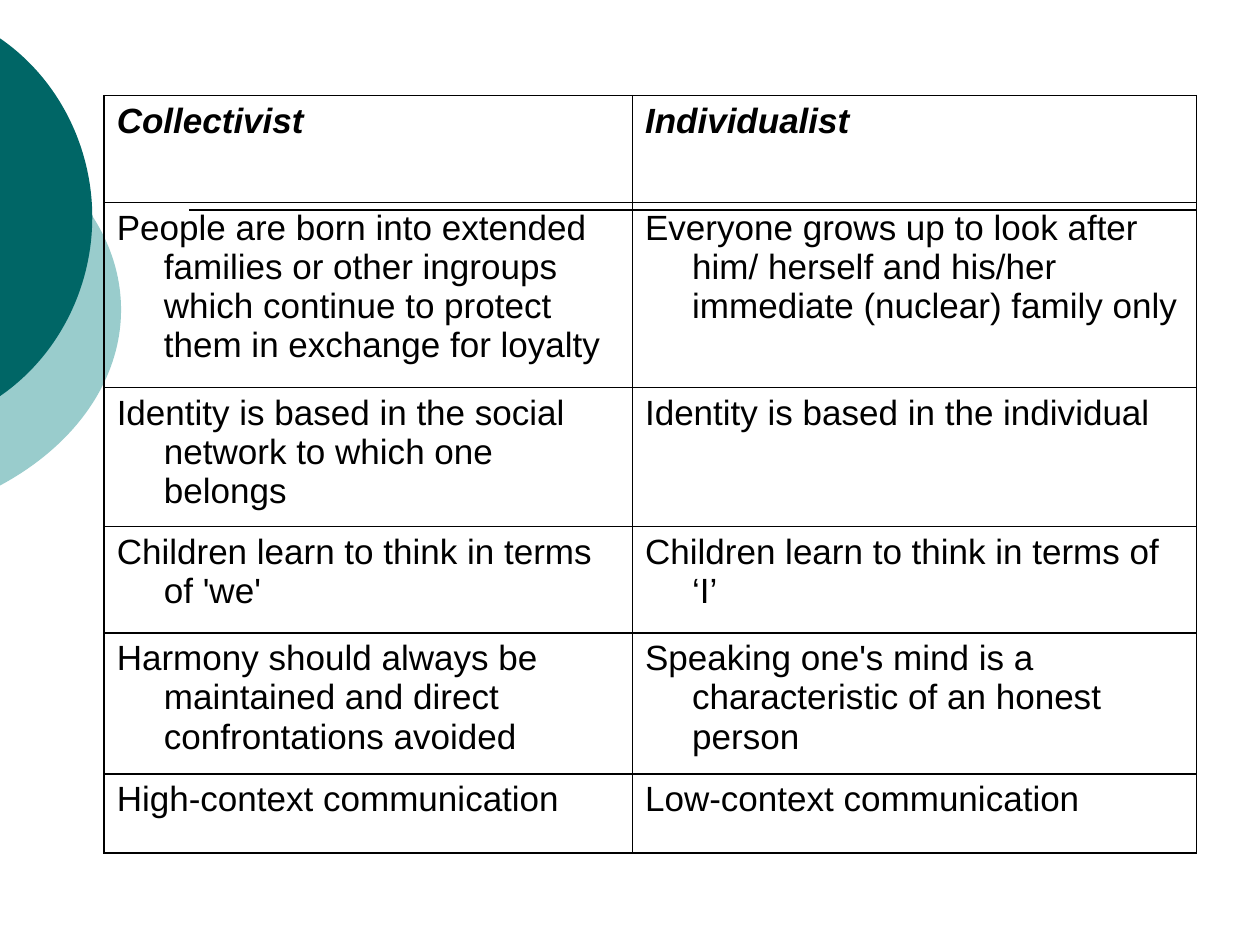
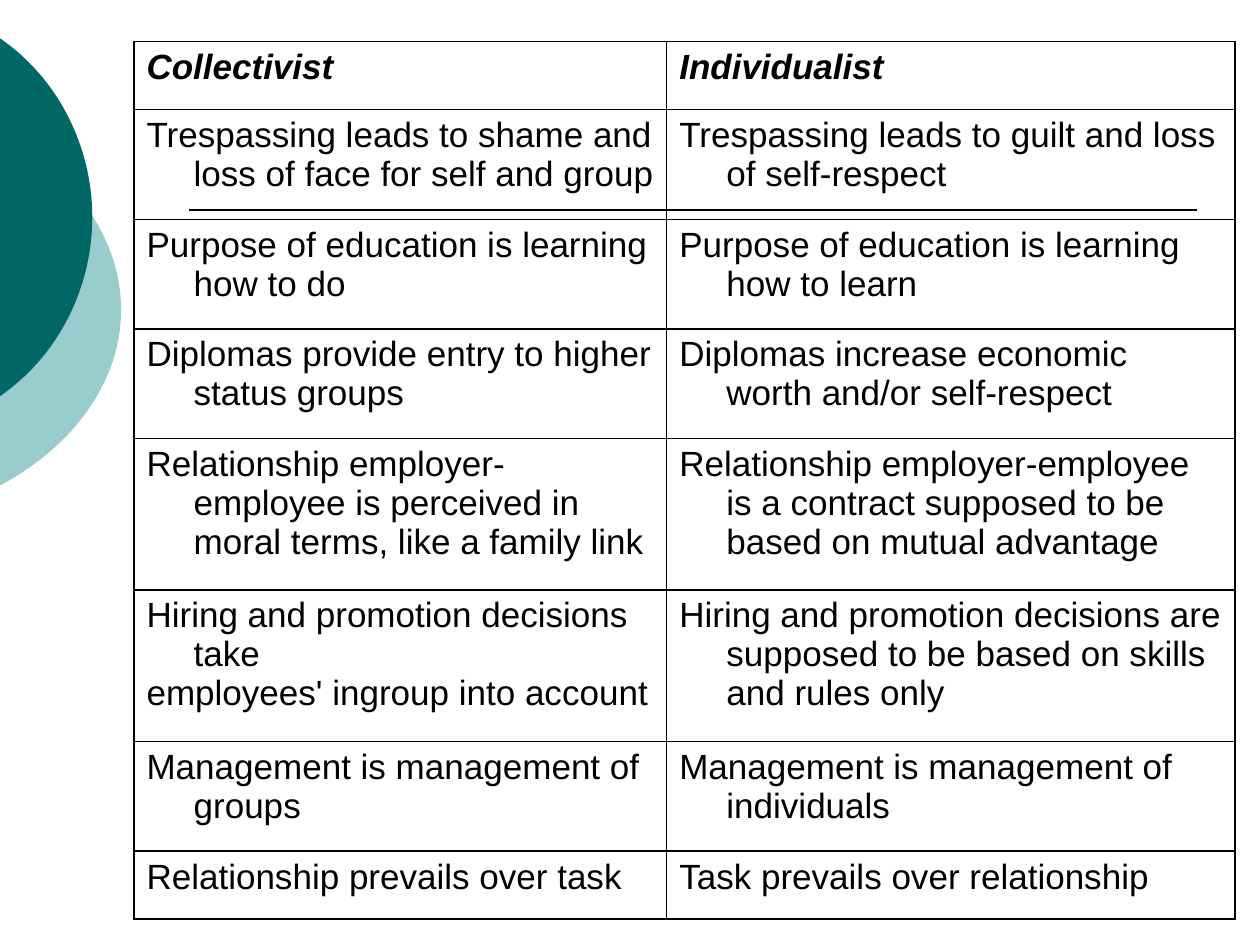
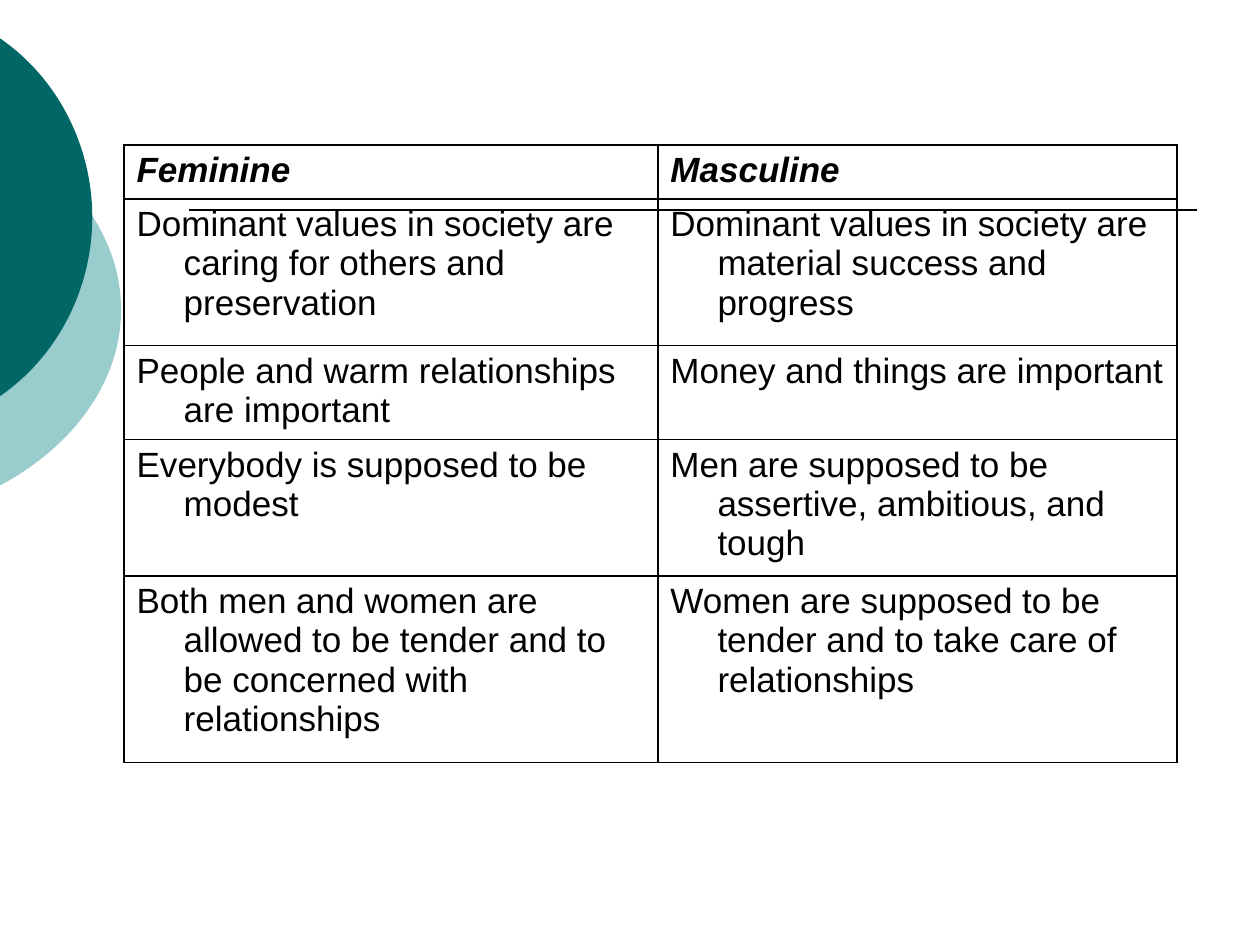
from dataclasses import dataclass

from lxml.etree import SubElement
from pptx import Presentation
from pptx.dml.color import RGBColor
from pptx.enum.shapes import MSO_CONNECTOR
from pptx.oxml import parse_xml
from pptx.oxml.ns import nsdecls, qn
from pptx.slide import Slide
from pptx.table import _Cell
from pptx.util import Cm, Pt


@dataclass(frozen=True)
class Theme:
    ink: str = "000000"
    dark: str = "006666"
    light: str = "99CCCC"
    font: str = "Arial"
    size: int = 20
    line: int = 1
    indent: float = 0.95


@dataclass(frozen=True)
class Disc:
    """An ellipse cut off by the left slide edge, in cm.

    The arc starts at height edge and bends by two control points.
    """
    left: float
    top: float
    wide: float
    high: float
    edge: float
    bends: tuple[tuple[float, float], tuple[float, float]]
    fill: str


@dataclass(frozen=True)
class Grid:
    """A table with its place, column widths and row heights in cm."""
    left: float
    top: float
    cols: tuple[float, ...]
    rows: tuple[float, ...]
    texts: tuple[tuple[str, str], ...]


THEME = Theme()
CUT = -0.02

DISCS = (
    Disc(-8.99, 1.9, 11.43, 8.69, 2.69, ((1.52, 3.51), (2.44, 4.83)),
         THEME.light),
    Disc(-6.73, 0, 8.59, 8.76, 0.76, ((1.17, 1.57), (1.86, 2.95)),
         THEME.dark),
)

GRIDS = (
    Grid(2.1, 1.93, (10.65, 11.37), (2.15, 3.73, 2.8, 2.15, 2.84, 1.6), (
        ("Collectivist", "Individualist"),
        ("People are born into extended families or other ingroups which "
         "continue to protect them in exchange for loyalty",
         "Everyone grows up to look after him/ herself and his/her "
         "immediate (nuclear) family only"),
        ("Identity is based in the social network to which one belongs",
         "Identity is based in the individual"),
        ("Children learn to think in terms of 'we'",
         "Children learn to think in terms of ‘I’"),
        ("Harmony should always be maintained and direct confrontations "
         "avoided",
         "Speaking one's mind is a characteristic of an honest person"),
        ("High-context communication", "Low-context communication"),
    )),
    Grid(2.7, 0.84, (10.74, 11.46),
         (1.37, 2.21, 2.21, 2.21, 3.05, 3.06, 2.21, 1.37), (
        ("Collectivist", "Individualist"),
        ("Trespassing leads to shame and loss of face for self and group",
         "Trespassing leads to guilt and loss of self-respect"),
        ("Purpose of education is learning how to do",
         "Purpose of education is learning how to learn"),
        ("Diplomas provide entry to higher status groups",
         "Diplomas increase economic worth and/or self-respect"),
        ("Relationship employer-employee is perceived in moral terms, like "
         "a family link",
         "Relationship employer-employee is a contract supposed to be based "
         "on mutual advantage"),
        ("Hiring and promotion decisions take\n"
         "employees' ingroup into account",
         "Hiring and promotion decisions are supposed to be based on skills "
         "and rules only"),
        ("Management is management of groups",
         "Management is management of individuals"),
        ("Relationship prevails over task",
         "Task prevails over relationship"),
    )),
    Grid(2.5, 2.92, (10.76, 10.47), (1.09, 2.95, 1.9, 2.75, 3.76), (
        ("Feminine", "Masculine"),
        ("Dominant values in society are caring for others and preservation",
         "Dominant values in society are material success and progress"),
        ("People and warm relationships are important",
         "Money and things are important"),
        ("Everybody is supposed to be modest",
         "Men are supposed to be assertive, ambitious, and tough"),
        ("Both men and women are allowed to be tender and to be concerned "
         "with relationships",
         "Women are supposed to be tender and to take care of "
         "relationships"),
    )),
)


def trace_arc(disc: Disc) -> str:
    """Give the path of the disc: two mirrored curves and a straight cut."""
    mid = disc.top + disc.high / 2
    upper = [(CUT, disc.edge), *disc.bends]
    lower = [(x, 2 * mid - y) for x, y in reversed(upper)]
    spots = [*upper, (disc.left + disc.wide, mid), *lower]
    first, *rest = [
        f'<a:pt x="{Cm(x - disc.left)}" y="{Cm(y - disc.top)}"/>'
        for x, y in spots]
    curves = "".join(
        f'<a:cubicBezTo>{"".join(rest[at:at + 3])}</a:cubicBezTo>'
        for at in (0, 3))
    return (f'<a:path {nsdecls("a")} w="{Cm(disc.wide)}" '
            f'h="{Cm(disc.high)}"><a:moveTo>{first}</a:moveTo>'
            f'{curves}<a:close/></a:path>')


def draw_disc(slide: Slide, disc: Disc) -> None:
    left, top = Cm(disc.left), Cm(disc.top)
    wide, high = Cm(disc.wide), Cm(disc.high)
    frame = slide.shapes.build_freeform(left, top)
    frame.add_line_segments([(left + wide, top), (left + wide, top + high)])
    shape = frame.convert_to_shape()
    paths = shape._element.spPr.find(f'.//{qn("a:pathLst")}')
    paths[:] = [parse_xml(trace_arc(disc))]
    shape.shadow.inherit = False
    shape.fill.solid()
    shape.fill.fore_color.rgb = RGBColor.from_string(disc.fill)
    shape.line.fill.background()


def draw_rule(slide: Slide) -> None:
    rule = slide.shapes.add_connector(
        MSO_CONNECTOR.STRAIGHT, Cm(3.81), Cm(4.24), Cm(24.13), Cm(4.24))
    rule.line.width = Pt(THEME.line)
    rule.line.color.rgb = RGBColor.from_string(THEME.ink)
    SubElement(rule._element.spPr, qn("a:effectLst"))


def frame_cell(cell: _Cell) -> None:
    """Clear the fill and rule all four sides."""
    cell.fill.background()
    props = cell._tc.get_or_add_tcPr()
    for place, side in enumerate("LRTB"):
        props.insert(place, parse_xml(
            f'<a:ln{side} {nsdecls("a")} w="{Pt(THEME.line)}"><a:solidFill>'
            f'<a:srgbClr val="{THEME.ink}"/></a:solidFill></a:ln{side}>'))


def fill_cell(cell: _Cell, text: str, head: bool) -> None:
    style = {"name": THEME.font, "size": Pt(THEME.size),
             "bold": head, "italic": head}
    indent = Cm(THEME.indent)
    cell.text_frame.text = text
    for para in cell.text_frame.paragraphs:
        props = para._p.get_or_add_pPr()
        for key, value in {"marL": indent, "indent": -indent}.items():
            props.set(key, str(value))
        for run in para.runs:
            for key, value in style.items():
                setattr(run.font, key, value)
            run.font.color.rgb = RGBColor.from_string(THEME.ink)


def draw_grid(slide: Slide, grid: Grid) -> None:
    table = slide.shapes.add_table(
        len(grid.rows), len(grid.cols), Cm(grid.left), Cm(grid.top),
        Cm(sum(grid.cols)), Cm(sum(grid.rows))).table
    table.first_row = table.horz_banding = False
    for col, width in zip(table.columns, grid.cols):
        col.width = Cm(width)
    for row, height in zip(table.rows, grid.rows):
        row.height = Cm(height)
    for down, texts in enumerate(grid.texts):
        for across, text in enumerate(texts):
            cell = table.cell(down, across)
            frame_cell(cell)
            fill_cell(cell, text, head=down == 0)


def main() -> None:
    deck = Presentation()
    deck.slide_width, deck.slide_height = Cm(25.4), Cm(19.05)
    for grid in GRIDS:
        slide = deck.slides.add_slide(deck.slide_layouts[6])
        for disc in DISCS:
            draw_disc(slide, disc)
        draw_rule(slide)
        draw_grid(slide, grid)
    deck.save("out.pptx")


if __name__ == "__main__":
    main()
